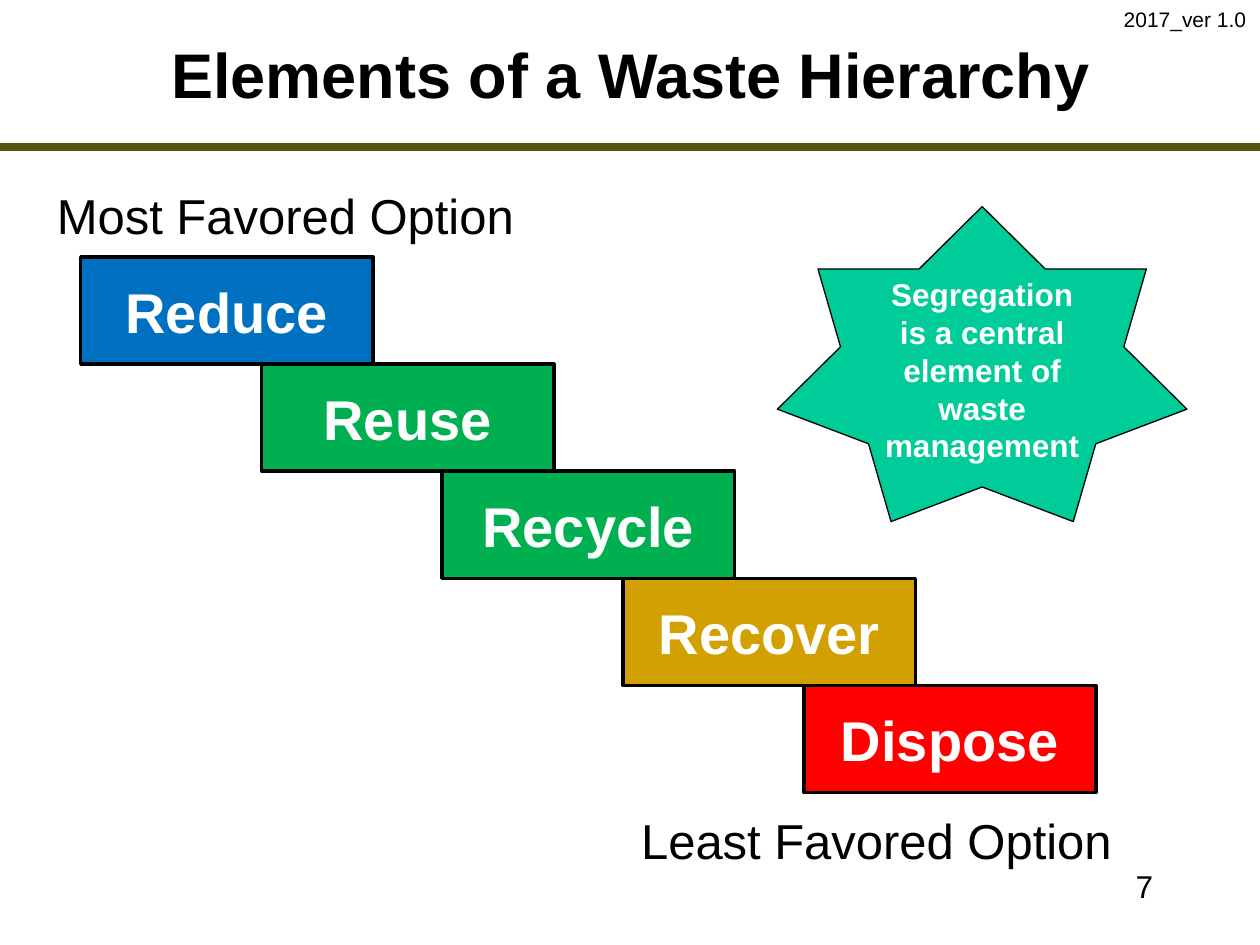
from typing import NamedTuple

from lxml.etree import SubElement
from pptx import Presentation
from pptx.dml.color import RGBColor
from pptx.enum.shapes import MSO_CONNECTOR, MSO_SHAPE
from pptx.enum.text import MSO_ANCHOR, PP_ALIGN
from pptx.oxml.ns import qn
from pptx.util import Inches, Pt

BLACK = RGBColor(0x00, 0x00, 0x00)
WHITE = RGBColor(0xFF, 0xFF, 0xFF)
OLIVE = RGBColor(0x54, 0x56, 0x12)
BLUE = RGBColor(0x00, 0x70, 0xC0)
GREEN = RGBColor(0x00, 0xB0, 0x50)
GOLD = RGBColor(0xD2, 0xA0, 0x00)
RED = RGBColor(0xFF, 0x00, 0x00)
TEAL = RGBColor(0x00, 0xCC, 0x99)

SLIDE_WIDTH, SLIDE_HEIGHT = 10, 7.5
RULE_TOP = 1.17


class Area(NamedTuple):
    left: float
    top: float
    width: float
    height: float

    def lengths(self) -> list:
        return [Inches(value) for value in self]


class Step(NamedTuple):
    name: str
    color: RGBColor


class Label(NamedTuple):
    text: str
    area: Area
    size: float
    align: PP_ALIGN = PP_ALIGN.CENTER
    bold: bool = False
    anchor: MSO_ANCHOR = MSO_ANCHOR.TOP
    wrap: bool = True


FIRST_STEP = Area(0.64, 2.04, 2.32, 0.85)
STEP_SHIFT = 1.435
STEPS = [
    Step("Reduce", BLUE),
    Step("Reuse", GREEN),
    Step("Recycle", GREEN),
    Step("Recover", GOLD),
    Step("Dispose", RED),
]
LABELS = [
    Label("Elements of a Waste Hierarchy", Area(1.17, 0.17, 7.67, 0.83), 36,
          bold=True, anchor=MSO_ANCHOR.MIDDLE),
    Label("Most Favored Option", Area(0.33, 1.42, 3.87, 0.53), 28),
    Label("Least Favored Option", Area(4.98, 6.38, 3.95, 0.53), 28),
    Label("7", Area(7.17, 6.83, 2.08, 0.5), 18, PP_ALIGN.RIGHT),
    Label("2017_ver 1.0", Area(8.82, 0, 1.18, 0.3), 12, PP_ALIGN.LEFT, wrap=False),
]


def write_text(shape, text: str, size: float, color: RGBColor, bold: bool,
               align: PP_ALIGN, anchor: MSO_ANCHOR, wrap: bool = True) -> None:
    frame = shape.text_frame
    frame.word_wrap = wrap
    frame.vertical_anchor = anchor
    para = frame.paragraphs[0]
    para.alignment = align
    span = para.add_run()
    span.text = text
    span.font.name = "Arial"
    span.font.size = Pt(size)
    span.font.bold = bold
    span.font.color.rgb = color


def draw_label(page, label: Label) -> None:
    box = page.shapes.add_textbox(*label.area.lengths())
    write_text(box, label.text, label.size, BLACK, label.bold,
               label.align, label.anchor, label.wrap)


def draw_filled(page, kind: MSO_SHAPE, area: Area, fill: RGBColor, line_width: float,
                text: str, size: float, anchor: MSO_ANCHOR) -> None:
    shape = page.shapes.add_shape(kind, *area.lengths())
    shape.shadow.inherit = False
    shape.fill.solid()
    shape.fill.fore_color.rgb = fill
    shape.line.color.rgb = BLACK
    shape.line.width = Pt(line_width)
    write_text(shape, text, size, WHITE, True, PP_ALIGN.CENTER, anchor)


def draw_title_rule(page) -> None:
    rule = page.shapes.add_connector(
        MSO_CONNECTOR.STRAIGHT, 0, Inches(RULE_TOP), Inches(SLIDE_WIDTH), Inches(RULE_TOP))
    rule.line.color.rgb = OLIVE
    rule.line.width = Pt(4.5)
    SubElement(rule.element.spPr, qn("a:effectLst"))


def draw_staircase(page) -> None:
    """Each step starts below the one before, shifted to the right."""
    for index, step in enumerate(STEPS):
        area = FIRST_STEP._replace(
            left=FIRST_STEP.left + index * STEP_SHIFT,
            top=FIRST_STEP.top + index * FIRST_STEP.height)
        draw_filled(page, MSO_SHAPE.RECTANGLE, area, step.color, 2,
                    step.name, 32, MSO_ANCHOR.MIDDLE)


def main() -> None:
    deck = Presentation()
    deck.slide_width = Inches(SLIDE_WIDTH)
    deck.slide_height = Inches(SLIDE_HEIGHT)
    page = deck.slides.add_slide(deck.slide_layouts[6])
    draw_title_rule(page)
    draw_staircase(page)
    draw_filled(page, MSO_SHAPE.STAR_7_POINT, Area(6.17, 1.64, 3.25, 2.5), TEAL, 0.75,
                "Segregation is a central element of waste management", 18, MSO_ANCHOR.TOP)
    for label in LABELS:
        draw_label(page, label)
    deck.save("out.pptx")


if __name__ == "__main__":
    main()
